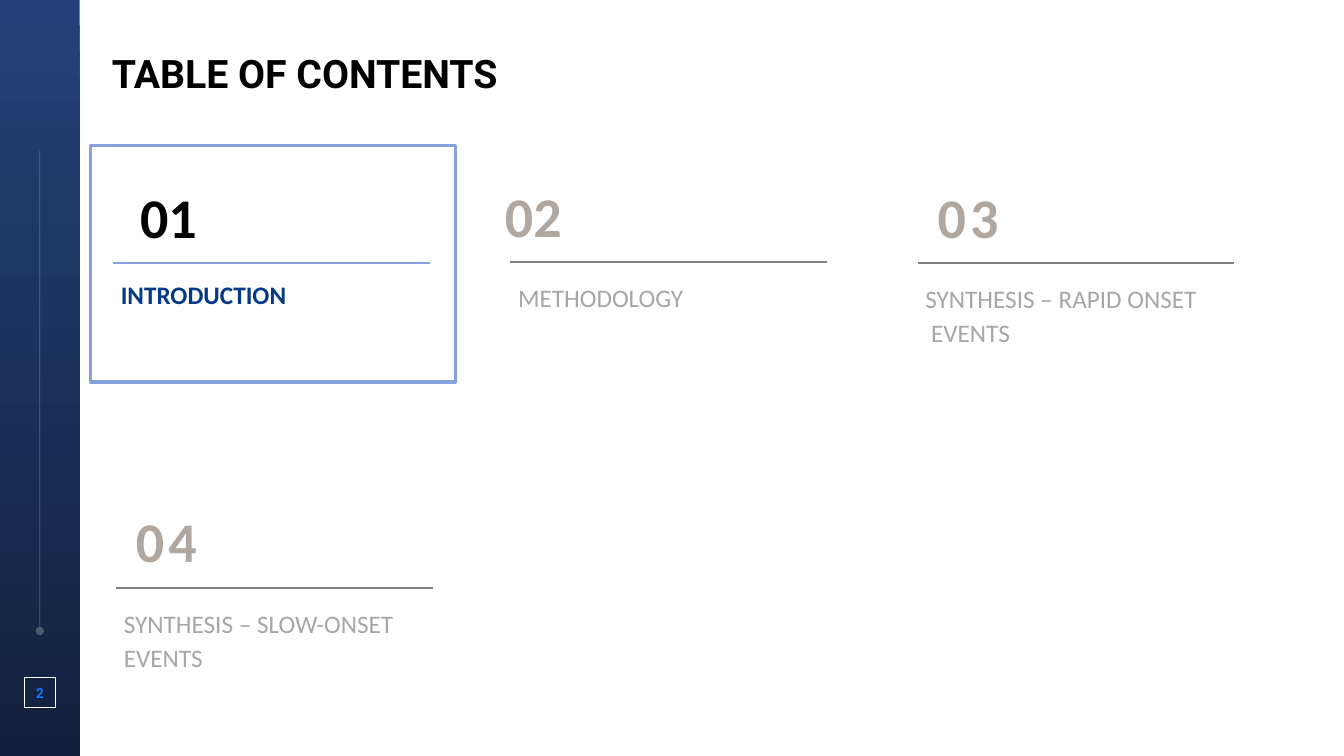
from dataclasses import dataclass
from lxml import etree
from pptx import Presentation
from pptx import util as u
from pptx.dml.color import RGBColor
from pptx.enum import shapes, text
from pptx.oxml.ns import qn

WIDTH, HEIGHT = 13.33, 7.5
ACCENT, RULE, MUTED, PALE = "85A2DB", "808080", "A6A6A6", "B0A8A0"


@dataclass
class Entry:
    """One contents entry, placed by the left end of its rule."""
    number: str
    lines: tuple
    left: float
    top: float
    indent: float
    tracking: int = 0
    active: bool = False


ENTRIES = [
    Entry("01", ("INTRODUCTION",), 1.12, 2.61, 0.17, active=True),
    Entry("02", ("METHODOLOGY",), 5.06, 2.6, -0.15),
    Entry("03", ("SYNTHESIS – RAPID ONSET", " EVENTS"), 9.1, 2.61, 0.1, 300),
    Entry("04", ("SYNTHESIS – SLOW-ONSET", "EVENTS"), 1.15, 5.83, 0.1, 300),
]


def paint(color_format, value):
    """Set a colour from a hex string."""
    color_format.rgb = RGBColor.from_string(value)


def add_text(page, box, lines, size, font, color, bold=False, inset=0.0,
             align=text.PP_ALIGN.LEFT, anchor=text.MSO_ANCHOR.TOP,
             spacing=1.0, after=0, tracking=0):
    """Add one paragraph of text, broken into the given lines."""
    frame = page.shapes.add_textbox(*map(u.Inches, box)).text_frame
    frame.word_wrap = True
    frame.vertical_anchor = anchor
    frame.margin_left = frame.margin_right = u.Inches(inset)
    frame.margin_top = frame.margin_bottom = u.Inches(inset / 2)
    para = frame.paragraphs[0]
    para.alignment = align
    para.line_spacing = spacing
    para.space_after = u.Pt(after)
    for index, line in enumerate(lines):
        if index:
            para.add_line_break()
        span = para.add_run()
        span.text = line
        span.font.size = u.Pt(size)
        span.font.name = font
        span.font.bold = bold
        paint(span.font.color, color)
        if tracking:
            span.font._element.set("spc", str(tracking))


def add_rectangle(page, box, line=None, weight=0.5):
    """Add an unfilled rectangle with an optional outline."""
    shape = page.shapes.add_shape(shapes.MSO_SHAPE.RECTANGLE, *map(u.Inches, box))
    shape.shadow.inherit = False
    shape.fill.background()
    if line:
        paint(shape.line.color, line)
        shape.line.width = u.Pt(weight)
    else:
        shape.line.fill.background()
    return shape


def add_line(page, start, end, color, weight):
    """Add a straight line without a shadow."""
    line = page.shapes.add_connector(
        shapes.MSO_CONNECTOR.STRAIGHT, *map(u.Inches, start + end))
    paint(line.line.color, color)
    line.line.width = u.Pt(weight)
    etree.SubElement(line._element.spPr, qn("a:effectLst"))
    return line


def add_sidebar(page, box, number):
    """Draw the gradient band with its faint line and page number."""
    left, top, width, height = box
    band = add_rectangle(page, box)
    band.fill.gradient()
    band.fill.gradient_angle = 270
    for stop, (position, color) in zip(band.fill.gradient_stops,
                                       ((0, "244179"), (1, "12203D"))):
        stop.position = position
        paint(stop.color, color)

    center = left + width / 2
    stem = add_line(page, (center, top + 6.26), (center, top + height / 5), "FFFFFF", 0.5)
    outline = stem.line._get_or_add_ln()
    solid = outline.find(f"{qn('a:solidFill')}/{qn('a:srgbClr')}")
    etree.SubElement(solid, qn("a:alpha"), val="24000")
    etree.SubElement(outline, qn("a:headEnd"), type="oval")

    side = 0.3
    corner = center - side / 2
    add_rectangle(page, (corner, top + 6.72, side, side), "FFFFFF")
    add_text(page, (corner, top + 6.79, side, 0.17), (number,), 10, "Roboto",
             "1775F9", True, align=text.PP_ALIGN.CENTER)


def add_entry(page, entry):
    """Draw a contents entry: number, rule, label and frame if active."""
    left, top = entry.left, entry.top
    add_line(page, (left, top), (left + 3.14, top), ACCENT if entry.active else RULE, 1.5)
    add_text(page, (left + entry.indent, top - 0.85, 0.91, 0.77), (entry.number,), 40,
             "Calibri", "000000" if entry.active else PALE, True, inset=0.1,
             after=6, tracking=entry.tracking)
    add_text(page, (left - 0.02, top + 0.11, 3.26, 0.4 * len(entry.lines)), entry.lines,
             18, "Calibri", "033985" if entry.active else MUTED, entry.active,
             inset=0.1, spacing=1.0 if entry.active else 1.14)
    if entry.active:
        add_rectangle(page, (left - 0.22, top - 1.17, 3.62, 2.35), ACCENT, 2.25)


def add_contents_page(deck):
    """Build the table of contents slide."""
    page = deck.slides.add_slide(deck.slide_layouts[6])
    add_sidebar(page, (0, 0, 0.79, HEIGHT), "2")
    add_text(page, (1.11, 0.49, 11.86, 0.47), ("TABLE OF CONTENTS",), 28, "Roboto",
             "000000", True, anchor=text.MSO_ANCHOR.MIDDLE)
    for entry in ENTRIES:
        add_entry(page, entry)


def main():
    """Create and save the deck."""
    deck = Presentation()
    deck.slide_width, deck.slide_height = u.Inches(WIDTH), u.Inches(HEIGHT)
    add_contents_page(deck)
    deck.save("out.pptx")


if __name__ == "__main__":
    main()
